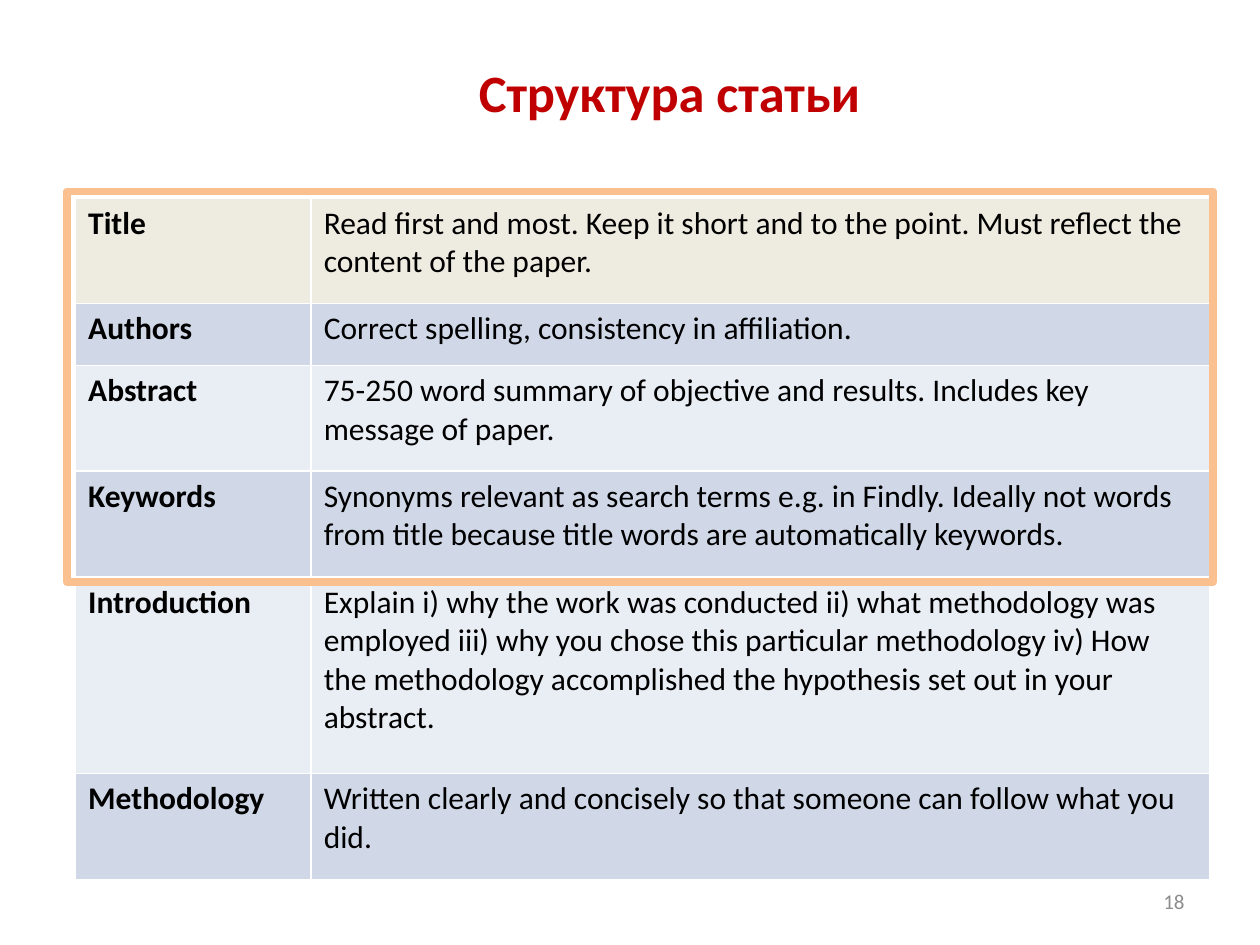
import lxml.etree
import pptx
import pptx.dml.color
import pptx.enum.shapes
import pptx.enum.text
import pptx.oxml
import pptx.util

Inches = pptx.util.Inches
Pt = pptx.util.Pt
RGBColor = pptx.dml.color.RGBColor
Align = pptx.enum.text.PP_ALIGN

RED = RGBColor(0xC0, 0x00, 0x00)
BLACK = RGBColor(0x00, 0x00, 0x00)
GREY = RGBColor(0x8C, 0x8C, 0x8C)
ORANGE = RGBColor(0xFA, 0xC0, 0x90)
CREAM = RGBColor(0xEE, 0xEC, 0xE1)
BLUE_BAND = RGBColor(0xD0, 0xD8, 0xE8)
PALE_BAND = RGBColor(0xE9, 0xED, 0xF4)

COLUMN_WIDTHS = (1.87, 7.13)
SECTIONS = (
    ("Title", "Read first and most. Keep it short and to the point. "
     "Must reflect the content of the paper.", 0.84),
    ("Authors", "Correct spelling, consistency in affiliation.", 0.49),
    ("Abstract", "75-250 word summary of objective and results. "
     "Includes key message of paper.", 0.84),
    ("Keywords", "Synonyms relevant as search terms e.g. in Findly. Ideally not words "
     "from title because title words are automatically keywords.", 0.84),
    ("Introduction", "Explain i) why the work was conducted ii) what methodology was "
     "employed iii) why you chose this particular methodology iv) How the methodology "
     "accomplished the hypothesis set out in your abstract.", 1.56),
    ("Methodology", "Written clearly and concisely so that someone can follow "
     "what you did.", 0.84),
)


def write_text(text_frame, text, size, color, bold=False, alignment=Align.LEFT):
    """Write one paragraph in a uniform font."""
    paragraph = text_frame.paragraphs[0]
    paragraph.text = text
    paragraph.alignment = alignment
    font = paragraph.font
    font.name = "Calibri"
    font.size = Pt(size)
    font.bold = bold
    font.color.rgb = color


def add_label(slide, box, text, size, color, bold, alignment):
    """Add a vertically centred line of text in the box."""
    shape = slide.shapes.add_textbox(*map(Inches, box))
    shape.text_frame.word_wrap = True
    shape.text_frame.vertical_anchor = pptx.enum.text.MSO_ANCHOR.MIDDLE
    write_text(shape.text_frame, text, size, color, bold, alignment)


def add_sections_table(slide, box):
    """Add the table of article sections with alternating bands."""
    shape = slide.shapes.add_table(len(SECTIONS), 2, *map(Inches, box))
    table = shape.table
    for column, width in zip(table.columns, COLUMN_WIDTHS):
        column.width = Inches(width)
    for index, (name, advice, height) in enumerate(SECTIONS):
        table.rows[index].height = Inches(height)
        band = BLUE_BAND if index % 2 else PALE_BAND
        for column, text in enumerate((name, advice)):
            cell = table.cell(index, column)
            cell.fill.solid()
            cell.fill.fore_color.rgb = band if index else CREAM
            write_text(cell.text_frame, text, 18, BLACK, bold=column == 0)


def add_highlight(slide, box):
    """Add a round-cornered outline around the box."""
    shape = slide.shapes.add_shape(
        pptx.enum.shapes.MSO_SHAPE.RECTANGLE, *map(Inches, box))
    shape.shadow.inherit = False
    shape.fill.background()
    shape.line.color.rgb = ORANGE
    shape.line.width = Pt(4.5)
    line = shape.line._get_or_add_ln()
    lxml.etree.SubElement(line, pptx.oxml.ns.qn("a:round"))


def main():
    """Build and save the slide."""
    presentation = pptx.Presentation()
    presentation.slide_width = Inches(10)
    presentation.slide_height = Inches(7.5)
    slide = presentation.slides.add_slide(presentation.slide_layouts[6])
    add_label(slide, (1.93, 0.3, 6.77, 0.85), "Структура статьи", 30, RED, True, Align.CENTER)
    add_sections_table(slide, (0.6, 1.57, 9, 5.4))
    add_highlight(slide, (0.53, 1.52, 9.1, 3.1))
    add_label(slide, (7.17, 6.95, 2.33, 0.4), "18", 12, GREY, False, Align.RIGHT)
    presentation.save("out.pptx")


if __name__ == "__main__":
    main()
